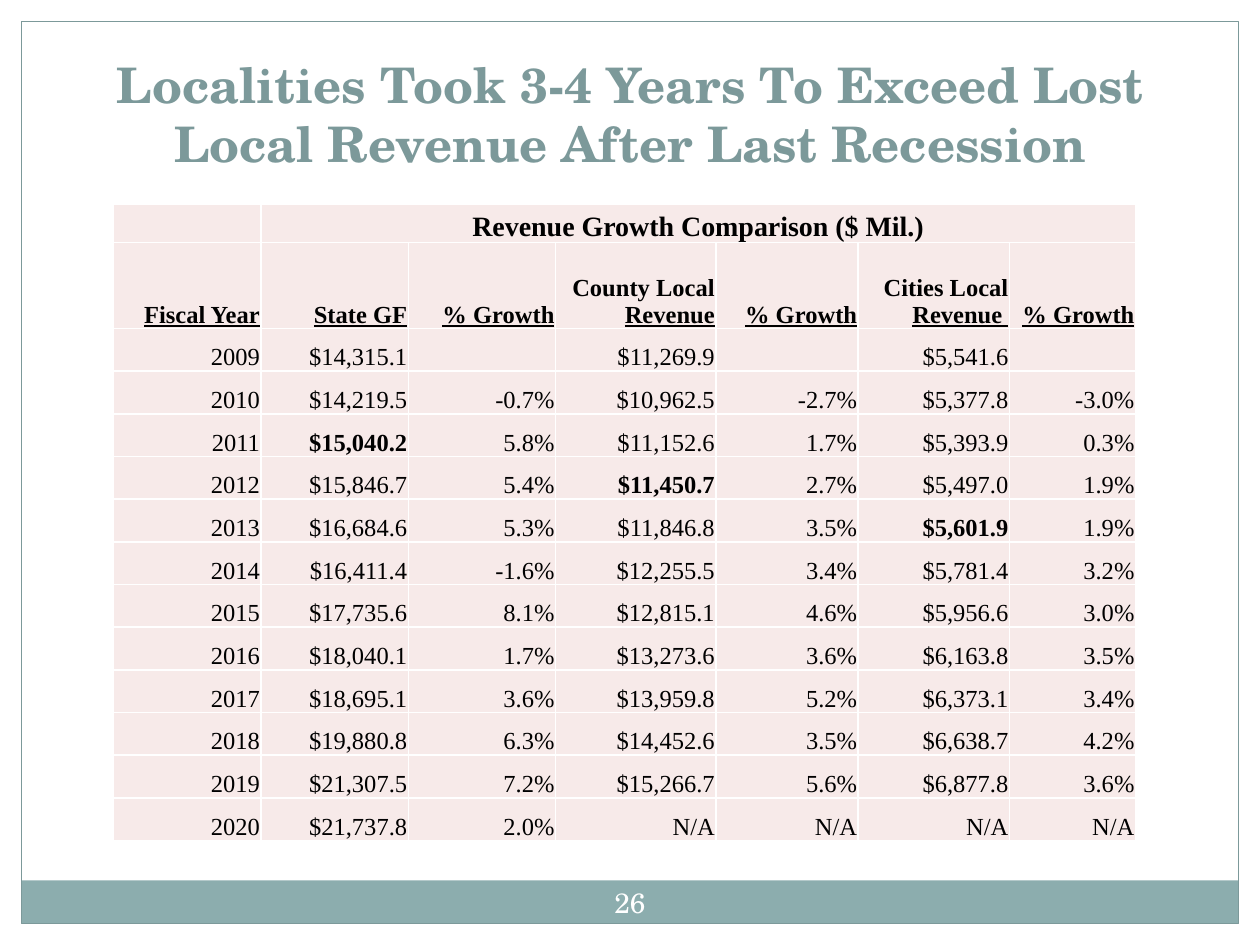
from lxml import etree
from pptx import Presentation
from pptx.dml.color import RGBColor
from pptx.enum.shapes import MSO_SHAPE
from pptx.enum.text import MSO_ANCHOR, PP_ALIGN
from pptx.oxml.ns import qn
from pptx.util import Cm, Pt

SLIDE_W, SLIDE_H = 25.4, 19.05
MARGIN = 0.43
WHITE, BLACK, TEAL, BAND, BLUSH = "FFFFFF", "000000", "7C999A", "8CADAE", "F7EAE9"
SCHOLA, TIMES = "TeX Gyre Schola", "Times New Roman"

COLUMN_WIDTHS = [2.97, 2.97, 2.97, 3.23, 2.87, 3.05, 2.54]
TITLE_ROW, HEADING_ROW, YEAR_ROW = 0.69, 1.73, 0.86
# Each heading is a plain lead and an underlined ending.
HEADINGS = [
    ("", "Fiscal Year"), ("", "State GF"), ("", "% Growth"),
    ("County Local ", "Revenue"), ("", "% Growth"),
    ("Cities Local ", "Revenue "), ("", "% Growth"),
]
REVENUES = [
    ("2009", "$14,315.1", "", "$11,269.9", "", "$5,541.6", ""),
    ("2010", "$14,219.5", "-0.7%", "$10,962.5", "-2.7%", "$5,377.8", "-3.0%"),
    ("2011", "$15,040.2", "5.8%", "$11,152.6", "1.7%", "$5,393.9", "0.3%"),
    ("2012", "$15,846.7", "5.4%", "$11,450.7", "2.7%", "$5,497.0", "1.9%"),
    ("2013", "$16,684.6", "5.3%", "$11,846.8", "3.5%", "$5,601.9", "1.9%"),
    ("2014", "$16,411.4", "-1.6%", "$12,255.5", "3.4%", "$5,781.4", "3.2%"),
    ("2015", "$17,735.6", "8.1%", "$12,815.1", "4.6%", "$5,956.6", "3.0%"),
    ("2016", "$18,040.1", "1.7%", "$13,273.6", "3.6%", "$6,163.8", "3.5%"),
    ("2017", "$18,695.1", "3.6%", "$13,959.8", "5.2%", "$6,373.1", "3.4%"),
    ("2018", "$19,880.8", "6.3%", "$14,452.6", "3.5%", "$6,638.7", "4.2%"),
    ("2019", "$21,307.5", "7.2%", "$15,266.7", "5.6%", "$6,877.8", "3.6%"),
    ("2020", "$21,737.8", "2.0%", "N/A", "N/A", "N/A", "N/A"),
]
LOSS_EXCEEDED = {"$15,040.2", "$11,450.7", "$5,601.9"}


def color(hex_code):
    return RGBColor.from_string(hex_code)


def put_text(frame, text, lead="", size=14, font=TIMES, ink=BLACK,
             bold=False, underline=False, align=PP_ALIGN.RIGHT):
    """Write the text into the first paragraph; a lead is never underlined."""
    paragraph = frame.paragraphs[0]
    paragraph.alignment = align
    pieces = [(lead, False), (text, underline)] if lead else [(text, underline)]
    for words, underlined in pieces:
        run = paragraph.add_run()
        run.text = words
        run.font.size = Pt(size)
        run.font.name = font
        run.font.color.rgb = color(ink)
        run.font.bold = bold
        run.font.underline = underlined


def add_box(slide, left, top, width, height, fill=None, line=None):
    box = slide.shapes.add_shape(
        MSO_SHAPE.RECTANGLE, Cm(left), Cm(top), Cm(width), Cm(height))
    box.shadow.inherit = False
    if fill:
        box.fill.solid()
        box.fill.fore_color.rgb = color(fill)
    else:
        box.fill.background()
    if line:
        box.line.color.rgb = color(line)
        box.line.width = Pt(0.75)
    else:
        box.line.fill.background()


def add_label(slide, text, left, top, width, height, inset=None,
              anchor=MSO_ANCHOR.TOP, **text_format):
    label = slide.shapes.add_textbox(Cm(left), Cm(top), Cm(width), Cm(height))
    frame = label.text_frame
    frame.word_wrap = True
    frame.vertical_anchor = anchor
    if inset is not None:
        frame.margin_left = frame.margin_right = Cm(inset)
        frame.margin_top = frame.margin_bottom = Cm(inset)
    put_text(frame, text, font=SCHOLA, align=PP_ALIGN.CENTER, **text_format)


def add_frame(slide, left, top, width, height):
    """Draw white slide edges, the footer band and the outline around the box."""
    add_box(slide, 0, 0, SLIDE_W, top, fill=WHITE)
    for edge in (left + width, 0):
        add_box(slide, edge, 0, left, SLIDE_H, fill=WHITE)
    band = 0.87
    add_box(slide, left, top + height - band, width, band, fill=BAND)
    add_box(slide, left, top, width, height, line=TEAL)
    number_w, number_h = 1.7, 1.22
    add_label(slide, "26", left + (width - number_w) / 2,
              top + height - (band + number_h) / 2, number_w, number_h,
              inset=0.13, anchor=MSO_ANCHOR.MIDDLE, size=16, ink=WHITE)


def style_cell(cell):
    cell.fill.solid()
    cell.fill.fore_color.rgb = color(BLUSH)
    cell.vertical_anchor = MSO_ANCHOR.BOTTOM
    cell.margin_left = cell.margin_right = cell.margin_top = Cm(0.02)
    cell.margin_bottom = 0
    properties = cell._tc.get_or_add_tcPr()
    for position, side in enumerate(("a:lnL", "a:lnR", "a:lnT", "a:lnB")):
        border = etree.Element(qn(side), w=str(Pt(1)))
        fill = etree.SubElement(border, qn("a:solidFill"))
        etree.SubElement(fill, qn("a:srgbClr"), val=WHITE)
        properties.insert(position, border)


def add_revenue_table(slide, left, top):
    row_heights = [TITLE_ROW, HEADING_ROW] + [YEAR_ROW] * len(REVENUES)
    table = slide.shapes.add_table(
        len(row_heights), len(COLUMN_WIDTHS), Cm(left), Cm(top),
        Cm(sum(COLUMN_WIDTHS)), Cm(sum(row_heights))).table
    table.first_row = table.horz_banding = False
    for column, width in zip(table.columns, COLUMN_WIDTHS):
        column.width = Cm(width)
    for row, height in zip(table.rows, row_heights):
        row.height = Cm(height)
    for cell in table.iter_cells():
        style_cell(cell)

    table.cell(0, 1).merge(table.cell(0, len(COLUMN_WIDTHS) - 1))
    put_text(table.cell(0, 0).text_frame, "")
    put_text(table.cell(0, 1).text_frame, "Revenue Growth Comparison ($ Mil.)",
             size=16, bold=True, align=PP_ALIGN.CENTER)
    for column, (lead, ending) in enumerate(HEADINGS):
        put_text(table.cell(1, column).text_frame, ending, lead=lead,
                 bold=True, underline=True)
    for row, year in enumerate(REVENUES, start=2):
        for column, value in enumerate(year):
            put_text(table.cell(row, column).text_frame, value,
                     bold=value in LOSS_EXCEEDED)


def main():
    deck = Presentation()
    deck.slide_width, deck.slide_height = Cm(SLIDE_W), Cm(SLIDE_H)
    slide = deck.slides.add_slide(deck.slide_layouts[6])
    add_frame(slide, MARGIN, MARGIN, SLIDE_W - 2 * MARGIN, SLIDE_H - 2 * MARGIN)
    add_label(slide, "Localities Took 3-4 Years To Exceed Lost Local Revenue "
              "After Last Recession", 0.85, 0.97, 23.7, 2.11,
              size=28, ink=TEAL, bold=True)
    add_revenue_table(slide, 2.29, 4.11)
    deck.save("out.pptx")


if __name__ == "__main__":
    main()
